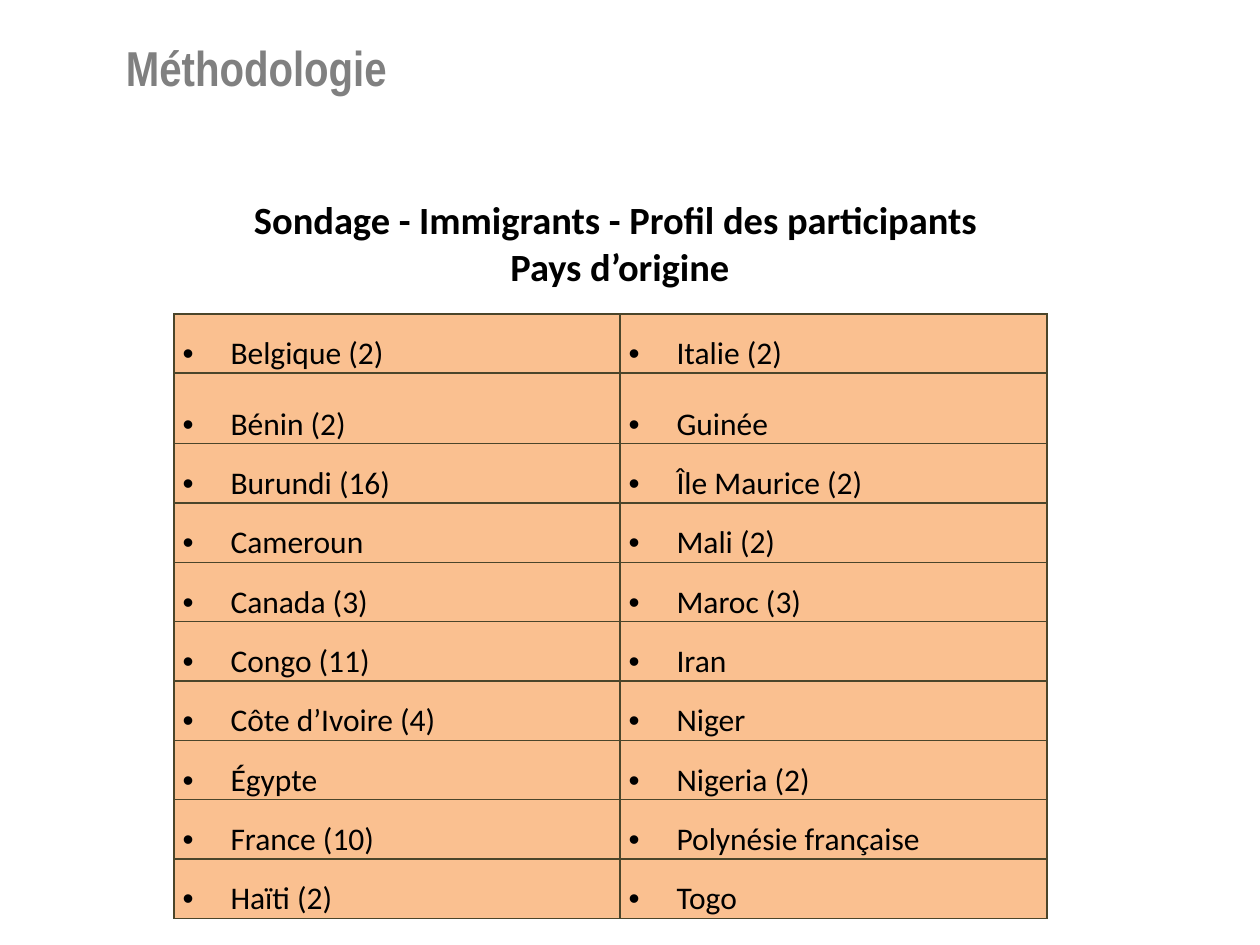
import pptx
import pptx.util
import pptx.dml.color
import pptx.enum.text
import pptx.oxml.ns
from lxml import etree

COLORS = {"title": "808080", "text": "000000", "cell": "FAC090", "border": "4A452A"}
COUNTRIES = [
    ("Belgique (2)", "Italie (2)"),
    ("Bénin (2)", "Guinée"),
    ("Burundi (16)", "Île Maurice (2)"),
    ("Cameroun", "Mali (2)"),
    ("Canada (3)", "Maroc (3)"),
    ("Congo (11)", "Iran"),
    ("Côte d’Ivoire (4)", "Niger"),
    ("Égypte", "Nigeria (2)"),
    ("France (10)", "Polynésie française"),
    ("Haïti (2)", "Togo"),
]


class Deck:
    """Style and current slide, measured on a grid of 100 columns by 75 rows."""

    def __init__(self):
        self.prs = pptx.Presentation()
        self.prs.slide_width = pptx.util.Inches(10)
        self.prs.slide_height = pptx.util.Inches(7.5)
        self.unit = self.prs.slide_width / 100
        self.s = self.prs.slides.add_slide(self.prs.slide_layouts[6])

    def grid(self, *lengths):
        return [round(n * self.unit) for n in lengths]

    def rgb(self, name):
        return pptx.dml.color.RGBColor.from_string(COLORS[name])

    def run(self, p, text, size, font="Calibri", color="text", bold=False):
        r = p.add_run()
        r.text = text
        r.font.size = pptx.util.Pt(size)
        r.font.name = font
        r.font.bold = bold
        r.font.color.rgb = self.rgb(color)

    def text(self, box, lines, size, align="LEFT", inset=None, **style):
        tf = self.s.shapes.add_textbox(*self.grid(*box)).text_frame
        tf.word_wrap = True
        if inset is not None:
            tf.margin_left = tf.margin_right = tf.margin_top = tf.margin_bottom = inset
        for i, line in enumerate(lines):
            p = tf.add_paragraph() if i else tf.paragraphs[0]
            p.alignment = getattr(pptx.enum.text.PP_ALIGN, align)
            self.run(p, line, size, **style)

    def bullet(self, p, indent):
        pPr = p._p.get_or_add_pPr()
        width = self.grid(indent)[0]
        pPr.set("marL", str(width))
        pPr.set("indent", str(-width))
        qn = pptx.oxml.ns.qn
        etree.SubElement(pPr, qn("a:buFont"), typeface="Arial")
        etree.SubElement(pPr, qn("a:buChar"), char="•")
        tabs = etree.SubElement(pPr, qn("a:tabLst"))
        for pos in self.grid(2.5, 4.9):
            etree.SubElement(tabs, qn("a:tab"), pos=str(pos), algn="l")

    def borders(self, cell):
        qn = pptx.oxml.ns.qn
        tcPr = cell._tc.get_or_add_tcPr()
        for i, side in enumerate(("lnL", "lnR", "lnT", "lnB")):
            ln = etree.Element(qn("a:" + side), w=str(pptx.util.Pt(1)))
            fill = etree.SubElement(ln, qn("a:solidFill"))
            etree.SubElement(fill, qn("a:srgbClr"), val=COLORS["border"])
            tcPr.insert(i, ln)

    def cell(self, cell, text, spacing):
        cell.fill.solid()
        cell.fill.fore_color.rgb = self.rgb("cell")
        self.borders(cell)
        cell.vertical_anchor = pptx.enum.text.MSO_ANCHOR.BOTTOM
        cell.margin_left = cell.margin_right = self.grid(0.7)[0]
        cell.margin_top = cell.margin_bottom = 0
        p = cell.text_frame.paragraphs[0]
        self.bullet(p, 3.8)
        p.line_spacing = spacing
        self.run(p, text, 18)

    def table(self, box, widths, heights, rows):
        shape = self.s.shapes.add_table(len(rows), len(widths), *self.grid(*box))
        table = shape.table
        table.first_row = table.horz_banding = False
        for column, width in zip(table.columns, self.grid(*widths)):
            column.width = width
        for i, (row, height) in enumerate(zip(table.rows, self.grid(*heights))):
            row.height = height
            for cell, text in zip(row.cells, rows[i]):
                self.cell(cell, text, 1.5 if i < 2 else 1.15)


def main():
    deck = Deck()
    deck.text((10, 3, 58.3, 7.8), ["Méthodologie"], 28, inset=0,
              font="Arial Narrow", color="title", bold=True)
    deck.text((16.2, 15.1, 66, 12.1),
              ["Sondage - Immigrants - Profil des participants ", "Pays d’origine"],
              22, align="CENTER", bold=True)
    total, tall = 48, 5.6
    heights = [(total - tall) / (len(COUNTRIES) - 1)] * len(COUNTRIES)
    heights[1] = tall
    deck.table((13.8, 24.9, 69.3, total), (35.4, 33.9), heights, COUNTRIES)
    deck.prs.save("out.pptx")


if __name__ == "__main__":
    main()
